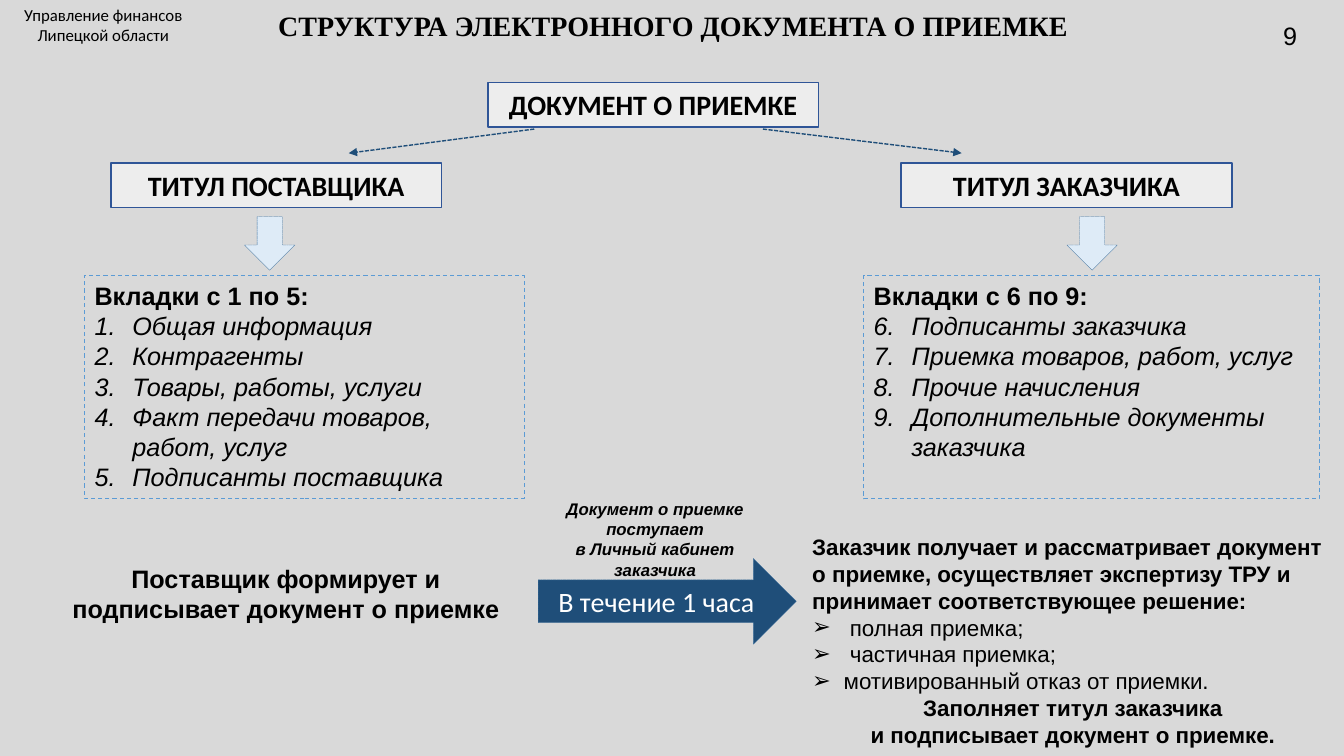
from pptx import Presentation
from pptx.dml.color import RGBColor
from pptx.enum.dml import MSO_LINE
from pptx.enum.shapes import MSO_CONNECTOR, MSO_SHAPE
from pptx.enum.text import MSO_ANCHOR, PP_ALIGN
from pptx.oxml.ns import qn
from pptx.util import Pt
from lxml import etree

BLACK = RGBColor(0x00, 0x00, 0x00)
WHITE = RGBColor(0xFF, 0xFF, 0xFF)
GREY = RGBColor(0xD9, 0xD9, 0xD9)
PALE = RGBColor(0xED, 0xED, 0xED)
NAVY = RGBColor(0x1F, 0x4E, 0x79)
ROYAL = RGBColor(0x2F, 0x55, 0x97)
STEEL = RGBColor(0x43, 0x73, 0x9E)
BLUE = RGBColor(0x5B, 0x9B, 0xD5)
ICE = RGBColor(0xDE, 0xEB, 0xF7)

LEFT, CENTER = PP_ALIGN.LEFT, PP_ALIGN.CENTER
TOP, MIDDLE = MSO_ANCHOR.TOP, MSO_ANCHOR.MIDDLE
RECT, ARROW = MSO_SHAPE.RECTANGLE, MSO_SHAPE.RIGHT_ARROW
STRAIGHT = MSO_CONNECTOR.STRAIGHT
SOLID, DASH, DOTS = MSO_LINE.SOLID, MSO_LINE.DASH, MSO_LINE.SQUARE_DOT


def add_list(para, indent, tag, **attrs):
    """Give the paragraph a hanging indent and a bullet or number."""
    props = para._p.get_or_add_pPr()
    props.set("marL", str(Pt(indent)))
    props.set("indent", str(-Pt(indent)))
    etree.SubElement(props, qn("a:buFont"), typeface="Arial")
    etree.SubElement(props, qn(tag), **attrs)


def write(shape, text, size=18, face="Arial", color=BLACK, bold=False,
          italic=False, align=LEFT, start=None, bullet=None):
    """Add one paragraph, filling the first one if it is still empty."""
    frame = shape.text_frame
    para = frame.add_paragraph() if frame.text else frame.paragraphs[0]
    para.alignment = align
    if start:
        add_list(para, 27, "a:buAutoNum", type="arabicPeriod", startAt=str(start))
    elif bullet:
        add_list(para, 22.5, "a:buChar", char=bullet)
    run = para.add_run()
    run.text = text
    font = run.font
    font.name, font.size = face, Pt(size)
    font.bold, font.italic = bold, italic
    font.color.rgb = color


def add_box(slide, left, top, width, height):
    box = slide.shapes.add_textbox(Pt(left), Pt(top), Pt(width), Pt(height))
    box.text_frame.word_wrap = True
    return box


def add_form(slide, kind, left, top, width, height, fill, color, weight,
             dash=SOLID, anchor=TOP):
    form = slide.shapes.add_shape(kind, Pt(left), Pt(top), Pt(width), Pt(height))
    form.shadow.inherit = False
    if fill is None:
        form.fill.background()
    else:
        form.fill.solid()
        form.fill.fore_color.rgb = fill
    form.line.color.rgb = color
    form.line.width = Pt(weight)
    form.line.dash_style = dash
    form.text_frame.word_wrap = True
    form.text_frame.vertical_anchor = anchor
    return form


def add_head(slide, left, top, text):
    head = add_form(slide, RECT, left, top, 236.2, 31.7, PALE, ROYAL, 1)
    write(head, text, 20, "Calibri", bold=True, align=CENTER)


def add_branch(slide, x1, x2):
    line = slide.shapes.add_connector(STRAIGHT, Pt(x1), Pt(92.2), Pt(x2), Pt(109.4))
    line.line.color.rgb = NAVY
    line.line.width = Pt(1)
    line.line.dash_style = DOTS
    etree.SubElement(line.line._get_or_add_ln(), qn("a:tailEnd"), type="triangle")
    etree.SubElement(line._element.spPr, qn("a:effectLst"))


def add_tabs(slide, left, width, title, start, items):
    """Draw a dashed panel with a heading and a numbered list."""
    panel = add_form(slide, RECT, left, 196.6, width, 159.8, None, BLUE, 0.75, DASH)
    write(panel, title, bold=True)
    for item in items:
        write(panel, item, italic=True, start=start)


def add_title(slide, text):
    title = slide.shapes.title
    title.left, title.top = Pt(0.7), Pt(0)
    title.width, title.height = Pt(960), Pt(36)
    title.text_frame.vertical_anchor = MIDDLE
    write(title, text, 20, "Times New Roman", bold=True, align=CENTER)


def main():
    deck = Presentation()
    deck.slide_width, deck.slide_height = Pt(960), Pt(540)
    slide = deck.slides.add_slide(deck.slide_layouts[5])
    slide.background.fill.solid()
    slide.background.fill.fore_color.rgb = GREY

    add_title(slide, "СТРУКТУРА ЭЛЕКТРОННОГО ДОКУМЕНТА О ПРИЕМКЕ")
    office = add_box(slide, 0, 0, 147.6, 36)
    write(office, "Управление финансов Липецкой области", 12, "Calibri", align=CENTER)
    write(add_box(slide, 909.4, 10.8, 43.9, 28.8), "9")

    add_branch(slide, 381.6, 249.1)
    add_branch(slide, 545, 686.9)
    add_head(slide, 348.5, 59, "ДОКУМЕНТ О ПРИЕМКЕ")
    add_head(slide, 79.2, 116.6, "ТИТУЛ ПОСТАВЩИКА")
    add_head(slide, 643.7, 116.6, "ТИТУЛ ЗАКАЗЧИКА")
    for left in (173.5, 761):
        down = add_form(slide, ARROW, left, 155.9, 38.2, 36, ICE, STEEL, 0.25, DOTS)
        down.rotation = 90

    add_tabs(slide, 60.5, 313.9, "Вкладки с 1 по 5:", 1, (
        "Общая информация", "Контрагенты", "Товары, работы, услуги",
        "Факт передачи товаров, работ, услуг", "Подписанты поставщика"))
    add_tabs(slide, 617, 325.4, "Вкладки с 6 по 9:", 6, (
        "Подписанты заказчика", "Приемка товаров, работ, услуг",
        "Прочие начисления", "Дополнительные документы заказчика"))

    seller = add_box(slide, 41.8, 398.9, 324.7, 51.1)
    write(seller, "Поставщик формирует и подписывает документ о приемке",
          bold=True, align=CENTER)

    buyer = add_box(slide, 573.1, 377.3, 386.6, 162.7)
    write(buyer, "Заказчик получает и рассматривает документ о приемке, осуществляет "
          "экспертизу ТРУ и принимает соответствующее решение:", 16, bold=True)
    for choice in (" полная приемка;", " частичная приемка;",
                   "мотивированный отказ от приемки."):
        write(buyer, choice, 16, bullet="➢")
    for text in ("Заполняет титул заказчика", "и подписывает документ о приемке."):
        write(buyer, text, 16, bold=True, align=CENTER)

    term = add_form(slide, ARROW, 384.5, 398.9, 184.3, 61.2, NAVY, STEEL, 0.25,
                    DOTS, MIDDLE)
    write(term, "В течение 1 часа", 20, "Calibri", WHITE, align=CENTER)
    note = add_box(slide, 390.2, 352.8, 155.5, 65.5)
    for text in ("Документ о приемке", "поступает", "в Личный кабинет заказчика"):
        write(note, text, 12, bold=True, italic=True, align=CENTER)

    deck.save("out.pptx")


if __name__ == "__main__":
    main()
